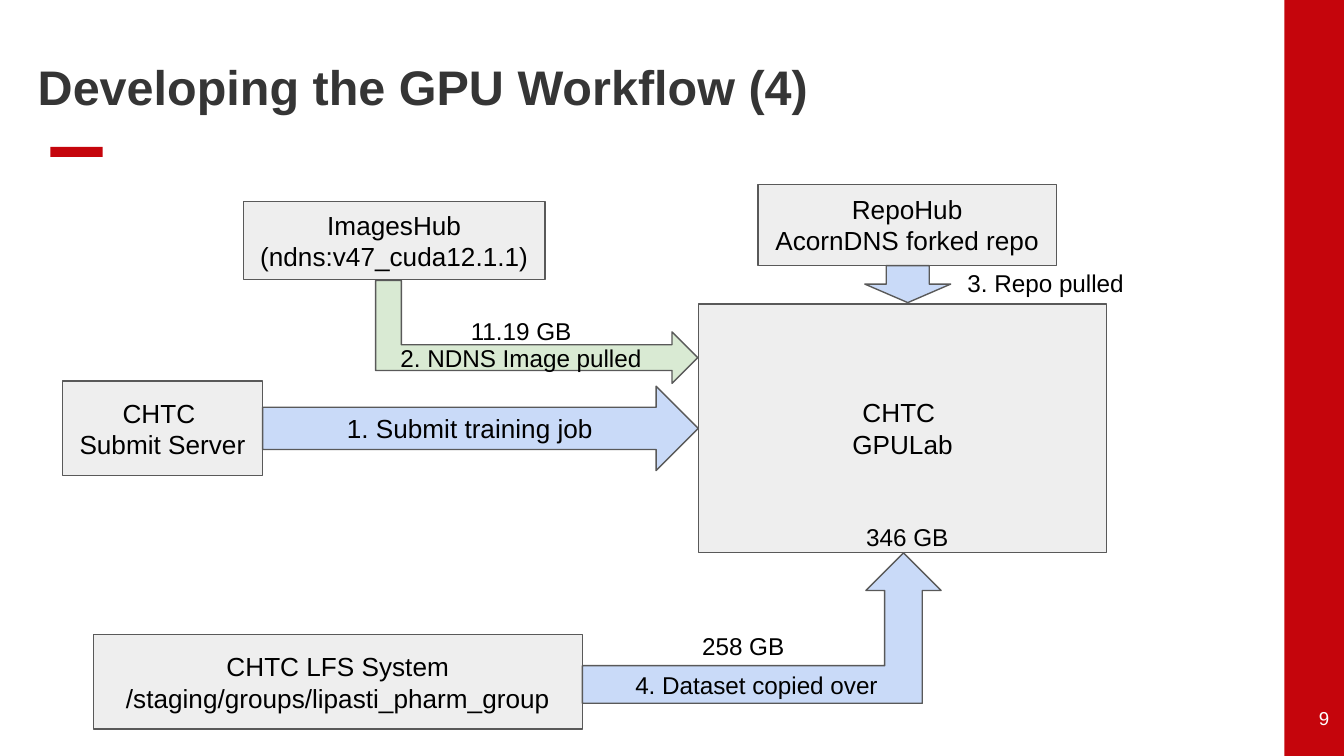
from pptx import Presentation
from pptx.dml.color import RGBColor
from pptx.enum.shapes import MSO_SHAPE as Shape
from pptx.enum.text import MSO_ANCHOR as Anchor, MSO_AUTO_SIZE as AutoSize, PP_ALIGN as Align
from pptx.util import Pt

RED = RGBColor(0xC5, 0x05, 0x0C)
CHARCOAL = RGBColor(0x35, 0x35, 0x35)
BLACK = RGBColor(0, 0, 0)
WHITE = RGBColor(255, 255, 255)
OUTLINE = RGBColor(0x59, 0x59, 0x59)
BOX_GREY = RGBColor(0xEE, 0xEE, 0xEE)
BLUE = RGBColor(0xC9, 0xDA, 0xF8)
GREEN = RGBColor(0xD9, 0xEA, 0xD3)

SLIDE_WIDTH, SLIDE_HEIGHT = 720, 405
BAND_LEFT = 688
FONT = "Arial"
INSET = 7.2


def write(shape, lines, size, color=BLACK, align=Align.CENTER, anchor=Anchor.MIDDLE,
          bold=False, insets=(INSET,) * 4, spacing=None):
    frame = shape.text_frame
    frame.word_wrap = True
    frame.auto_size = AutoSize.NONE
    frame.vertical_anchor = anchor
    frame.margin_left, frame.margin_top, frame.margin_right, frame.margin_bottom = map(Pt, insets)
    for i, line in enumerate(lines):
        paragraph = frame.add_paragraph() if i else frame.paragraphs[0]
        paragraph.alignment = align
        if spacing:
            paragraph.line_spacing = spacing
        run = paragraph.add_run()
        run.text = line
        run.font.name = FONT
        run.font.size = Pt(size)
        run.font.bold = bold
        run.font.color.rgb = color


def add_figure(slide, kind, box, fill, outline=OUTLINE, turned=False):
    """Add a filled shape that covers box; turned rotates it by 90 degrees."""
    left, top, width, height = box
    if turned:
        left += (width - height) / 2
        top += (height - width) / 2
        width, height = height, width
    figure = slide.shapes.add_shape(kind, Pt(left), Pt(top), Pt(width), Pt(height))
    figure.rotation = 90 if turned else 0
    figure.shadow.inherit = False
    figure.fill.solid()
    figure.fill.fore_color.rgb = fill
    if outline is None:
        figure.line.fill.background()
    else:
        figure.line.color.rgb = outline
        figure.line.width = Pt(0.75)
    return figure


def add_heading(slide, left, top, text):
    title = slide.shapes.title
    title.left, title.top, title.width, title.height = Pt(left), Pt(top), Pt(482.4), Pt(31)
    write(title, [text], 26, CHARCOAL, Align.LEFT, Anchor.BOTTOM, True, (0, 3, 5, 0), 0.9)
    add_figure(slide, Shape.RECTANGLE, (left + 6.8, top + 47.7, 28, 5.4), RED, None)


def add_side_band(slide, left, top, width, height, number):
    add_figure(slide, Shape.RECTANGLE, (left, top, width, height), RED, None)
    page = slide.shapes.add_textbox(Pt(left + width - 46), Pt(top + height - 31.3), Pt(43), Pt(31))
    write(page, [number], 10, WHITE, Align.RIGHT, Anchor.TOP, insets=(5,) * 4)


def add_workflow(slide, left, top):
    def placed(x, y, width, height):
        return left + x, top + y, width, height

    systems = [
        (["RepoHub", "AcornDNS forked repo"], (372.6, 0, 159.8, 43.4)),
        (["CHTC ", "Submit Server"], (0, 105.5, 107.2, 50.6)),
        (["CHTC LFS System", "/staging/groups/lipasti_pharm_group"], (16.5, 241.3, 262, 50.6)),
        (["CHTC ", "GPULab"], (340.6, 64.2, 218.8, 133)),
        (["ImagesHub", "(ndns:v47_cuda12.1.1)"], (96.8, 9.4, 161.8, 41.6)),
    ]
    for lines, box in systems:
        write(add_figure(slide, Shape.RECTANGLE, placed(*box), BOX_GREY), lines, 14)

    submit = add_figure(slide, Shape.RIGHT_ARROW, placed(107.2, 108.2, 233.4, 45.2), BLUE)
    write(submit, ["1. Submit training job"], 14)
    add_figure(slide, Shape.BENT_UP_ARROW, placed(167.7, 51.5, 172.6, 55.2), GREEN, turned=True)
    add_figure(slide, Shape.BENT_UP_ARROW, placed(278.5, 197.5, 192.2, 80.6), BLUE)
    add_figure(slide, Shape.RIGHT_ARROW, placed(429.8, 43.6, 46, 19.8), BLUE, turned=True)

    labels = [
        ("2. NDNS Image pulled", 173.1, 77.9, 144.8),
        ("11.19 GB", 206.3, 63.4, 78.6),
        ("4. Dataset copied over", 299.3, 253.2, 144.8),
        ("258 GB", 331.5, 232.4, 66.2),
        ("346 GB", 419.4, 173.9, 66.2),
        ("3. Repo pulled", 475.8, 38, 101.6),
    ]
    for text, x, y, width in labels:
        label = slide.shapes.add_textbox(*map(Pt, placed(x, y, width, 30.2)))
        write(label, [text], 13, anchor=Anchor.TOP)


def main():
    deck = Presentation()
    deck.slide_width, deck.slide_height = Pt(SLIDE_WIDTH), Pt(SLIDE_HEIGHT)
    slide = deck.slides.add_slide(deck.slide_layouts.get_by_name("Title Only"))
    add_side_band(slide, BAND_LEFT, 0, SLIDE_WIDTH - BAND_LEFT, SLIDE_HEIGHT, "9")
    add_heading(slide, 20.2, 31, "Developing the GPU Workflow (4)")
    add_workflow(slide, 33.5, 98.7)
    deck.save("out.pptx")


if __name__ == "__main__":
    main()
